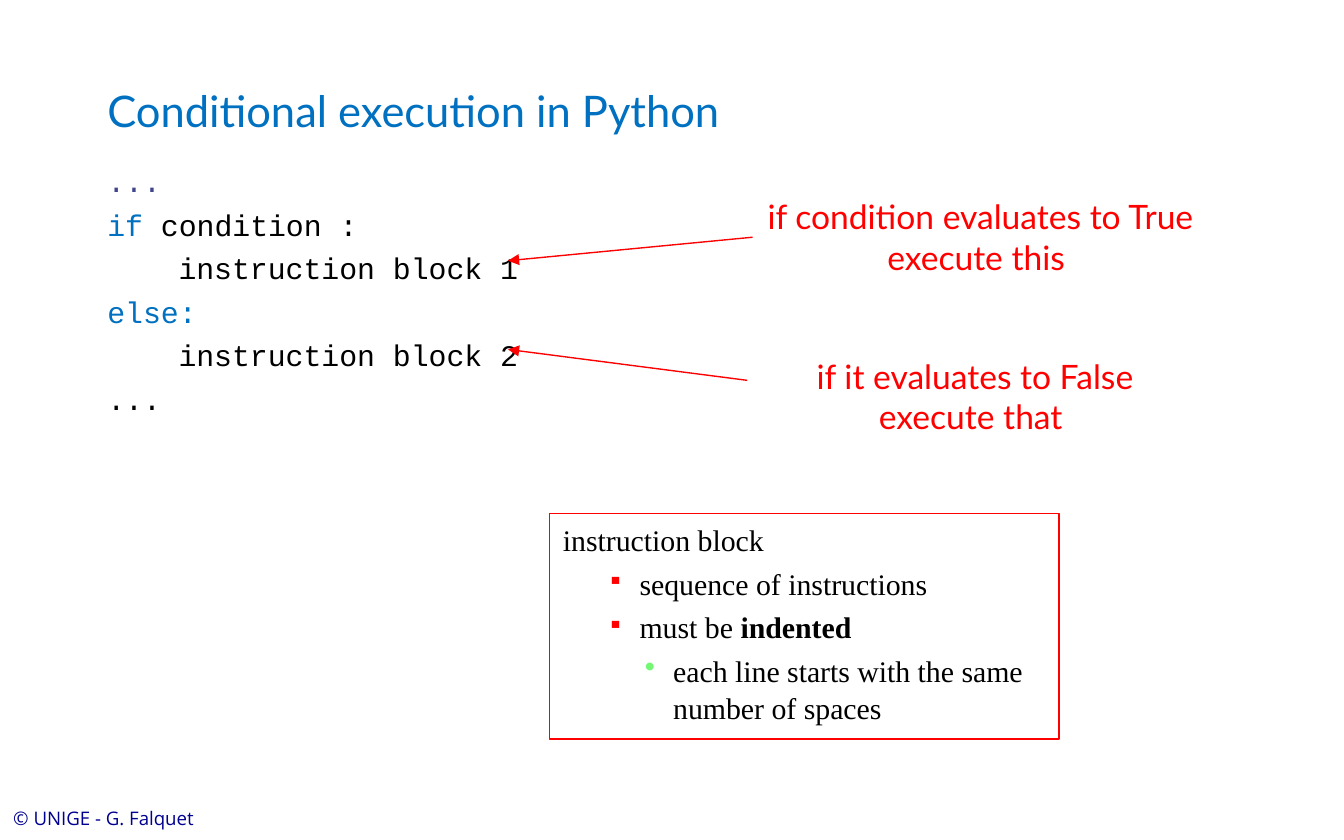
import pptx
import pptx.dml.color
import pptx.enum.shapes
import pptx.enum.text
import pptx.oxml
import pptx.oxml.ns
import pptx.util

Inches = pptx.util.Inches
Pt = pptx.util.Pt
RGB = pptx.dml.color.RGBColor.from_string
ALIGN = pptx.enum.text.PP_ALIGN
ANCHOR = pptx.enum.text.MSO_ANCHOR

COLOURS = {
    "blue": "0070C0", "slate": "40458C", "black": "000000",
    "red": "FF0000", "green": "74F775", "navy": "000090",
}

deck = pptx.Presentation()
deck.slide_width, deck.slide_height = Inches(10), Inches(6.25)
page = deck.slides.add_slide(deck.slide_layouts[6])


def add_box(left, top, width, height, anchor=ANCHOR.TOP):
    box = page.shapes.add_textbox(Inches(left), Inches(top), Inches(width), Inches(height))
    box.text_frame.word_wrap = True
    box.text_frame.vertical_anchor = anchor
    return box


def add_para(box, spans, font, size, align=ALIGN.LEFT):
    """Add a paragraph of (text, colour, bold) spans, using the empty first one."""
    frame = box.text_frame
    para = frame.paragraphs[0] if not frame.text else frame.add_paragraph()
    para.alignment = align
    for text, colour, bold in spans:
        span = para.add_run()
        span.text = text
        span.font.name, span.font.size, span.font.bold = font, Pt(size), bold
        span.font.color.rgb = RGB(COLOURS[colour])
    return para


# Title
title = add_box(0.7, 0.5, 8.19, 0.56, ANCHOR.BOTTOM)
add_para(title, [("Conditional execution in Python", "blue", False)], "Lato", 23.3)

# Code, with block lines indented by four characters
code = add_box(0.7, 1.15, 3.92, 4.31)
code_lines = [
    (0, [("...", "slate", False)]),
    (0, [("if", "blue", False), (" condition :", "black", False)]),
    (0.53, [("instruction block 1", "black", False)]),
    (0, [("else:", "blue", False)]),
    (0.53, [("instruction block 2", "black", False)]),
    (0, [("...", "black", False)]),
]
for indent, spans in code_lines:
    para = add_para(code, spans, "Courier New", 16)
    para.space_before, para.line_spacing = Pt(3.2), 1.05
    para._p.get_or_add_pPr().set("marL", str(Inches(indent)))

# Definition of an instruction block
definition = add_box(4.09, 3.82, 3.79, 1.68)
definition.line.color.rgb = RGB(COLOURS["red"])
definition.line.width = Pt(0.75)
square = (0.57, -0.24, "▪", "red", 74)
dot = (0.82, -0.21, "•", "green", 100)
definition_lines = [
    (None, [("instruction block", "black", False)]),
    (square, [("sequence of instructions", "black", False)]),
    (square, [("must be ", "black", False), ("indented", "black", True)]),
    (dot, [("each line starts with the same number of spaces", "black", False)]),
]
for bullet, spans in definition_lines:
    para = add_para(definition, spans, "Times New Roman", 16)
    para.space_before, para.line_spacing = Pt(3.2), 1.05
    if bullet:
        margin, hanging, mark, colour, percent = bullet
        props = para._p.get_or_add_pPr()
        props.set("marL", str(Inches(margin)))
        props.set("indent", str(Inches(hanging)))
        namespace = pptx.oxml.ns.nsdecls("a")
        for xml in (
            f'<a:buClr {namespace}><a:srgbClr val="{COLOURS[colour]}"/></a:buClr>',
            f'<a:buSzPct {namespace} val="{percent * 1000}"/>',
            f'<a:buChar {namespace} char="{mark}"/>',
        ):
            props.append(pptx.oxml.parse_xml(xml))

# Red remarks, each with an arrow to its code line
remarks = [
    ("if condition evaluates to True execute this ", 5.6, 1.41, 1.77, 1.94, True),
    ("if it evaluates to False execute that ", 5.56, 2.6, 2.83, 2.6, False),
]
for text, left, top, start, end, joined in remarks:
    remark = add_box(left, top, 3.39, 0.71)
    add_para(remark, [(text, "red", False)], "Lato", 18, ALIGN.CENTER)
    arrow = page.shapes.add_connector(
        pptx.enum.shapes.MSO_CONNECTOR.STRAIGHT,
        Inches(left), Inches(start), Inches(3.78), Inches(end))
    if joined:
        arrow.begin_connect(remark, 1)
    arrow.line.color.rgb = RGB(COLOURS["red"])
    arrow.line.width = Pt(0.75)
    namespace = pptx.oxml.ns.nsdecls("a")
    arrow.line._get_or_add_ln().append(
        pptx.oxml.parse_xml(f'<a:tailEnd {namespace} type="triangle"/>'))
    arrow._element.spPr.append(pptx.oxml.parse_xml(f"<a:effectLst {namespace}/>"))

# Footer
footer = add_box(0, 5.95, 3.25, 0.27, ANCHOR.BOTTOM)
add_para(footer, [("© UNIGE - G. Falquet", "navy", False)], "Open Sans", 10)

deck.save("out.pptx")
